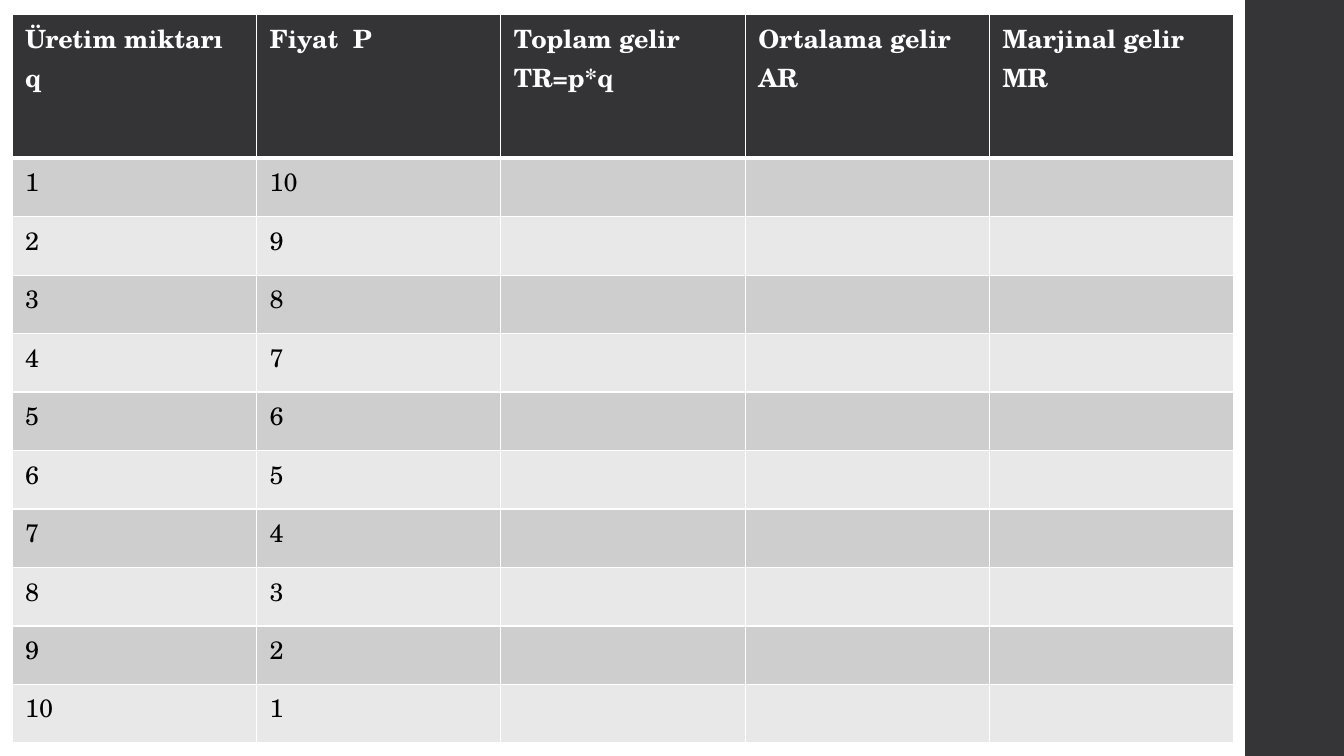
import pptx
import pptx.dml.color
import pptx.enum.shapes
import pptx.oxml.ns
import pptx.util
from lxml import etree
from pptx.util import Inches, Pt

# Content
HEADINGS = ["Üretim miktarı  q", "Fiyat  P", "Toplam gelir TR=p*q",
            "Ortalama gelir AR", "Marjinal gelir MR"]
PRICES = {quantity: 11 - quantity for quantity in range(1, 11)}
ROWS = [HEADINGS] + [[str(quantity), str(price), "", "", ""]
                     for quantity, price in PRICES.items()]

# Format
COLORS = {"sidebar": "353537", "header": "343437", "odd": "CECECE",
          "even": "E8E8E8", "border": "FFFFFF", "heading": "FFFFFF",
          "body": "000000"}
FONT = {"name": "TeX Gyre Schola", "size": Pt(18)}
MARGINS = {"margin_left": Inches(0.13), "margin_right": Inches(0.13),
           "margin_top": Inches(0.05), "margin_bottom": Inches(0.05)}
TABLE_LEFT, TABLE_TOP, TABLE_WIDTH = 0.12, 0.14, 12.12
HEADER_HEIGHT, ROW_HEIGHT = 1.43, 0.58


def rgb(key):
    return pptx.dml.color.RGBColor.from_string(COLORS[key])


def apply(target, values):
    for attribute, value in values.items():
        setattr(target, attribute, value)


def add_borders(cell, top, bottom):
    properties = cell._tc.get_or_add_tcPr()
    qn = pptx.oxml.ns.qn
    for side, points in (("L", 1), ("R", 1), ("T", top), ("B", bottom)):
        line = etree.SubElement(properties, qn(f"a:ln{side}"), w=str(Pt(points)))
        fill = etree.SubElement(line, qn("a:solidFill"))
        etree.SubElement(fill, qn("a:srgbClr"), val=COLORS["border"])


def main():
    deck = pptx.Presentation()
    deck.slide_width, deck.slide_height = Inches(13.33), Inches(7.5)
    slide = deck.slides.add_slide(deck.slide_layouts[6])

    # Sidebar
    sidebar = slide.shapes.add_shape(
        pptx.enum.shapes.MSO_SHAPE.RECTANGLE,
        Inches(12.35), 0, Inches(0.98), deck.slide_height)
    sidebar.shadow.inherit = False
    sidebar.fill.solid()
    sidebar.fill.fore_color.rgb = rgb("sidebar")
    sidebar.line.fill.background()

    # Revenue table
    table_height = HEADER_HEIGHT + ROW_HEIGHT * len(PRICES)
    revenue = slide.shapes.add_table(
        len(ROWS), len(HEADINGS), Inches(TABLE_LEFT), Inches(TABLE_TOP),
        Inches(TABLE_WIDTH), Inches(table_height)).table
    for column in revenue.columns:
        column.width = Inches(TABLE_WIDTH / len(HEADINGS))

    for r, texts in enumerate(ROWS):
        is_header = r == 0
        revenue.rows[r].height = Inches(HEADER_HEIGHT if is_header else ROW_HEIGHT)
        band = "header" if is_header else "odd" if r % 2 else "even"
        for c, text in enumerate(texts):
            cell = revenue.cell(r, c)
            apply(cell, MARGINS)
            add_borders(cell, top=3 if r == 1 else 1, bottom=3 if is_header else 1)
            cell.fill.solid()
            cell.fill.fore_color.rgb = rgb(band)
            cell.text = text
            font = cell.text_frame.paragraphs[0].font
            apply(font, {**FONT, "bold": is_header})
            font.color.rgb = rgb("heading" if is_header else "body")
            for run in cell.text_frame.paragraphs[0].runs:
                apply(run.font, {**FONT, "bold": is_header})
                run.font.color.rgb = rgb("heading" if is_header else "body")

    deck.save("out.pptx")


if __name__ == "__main__":
    main()
